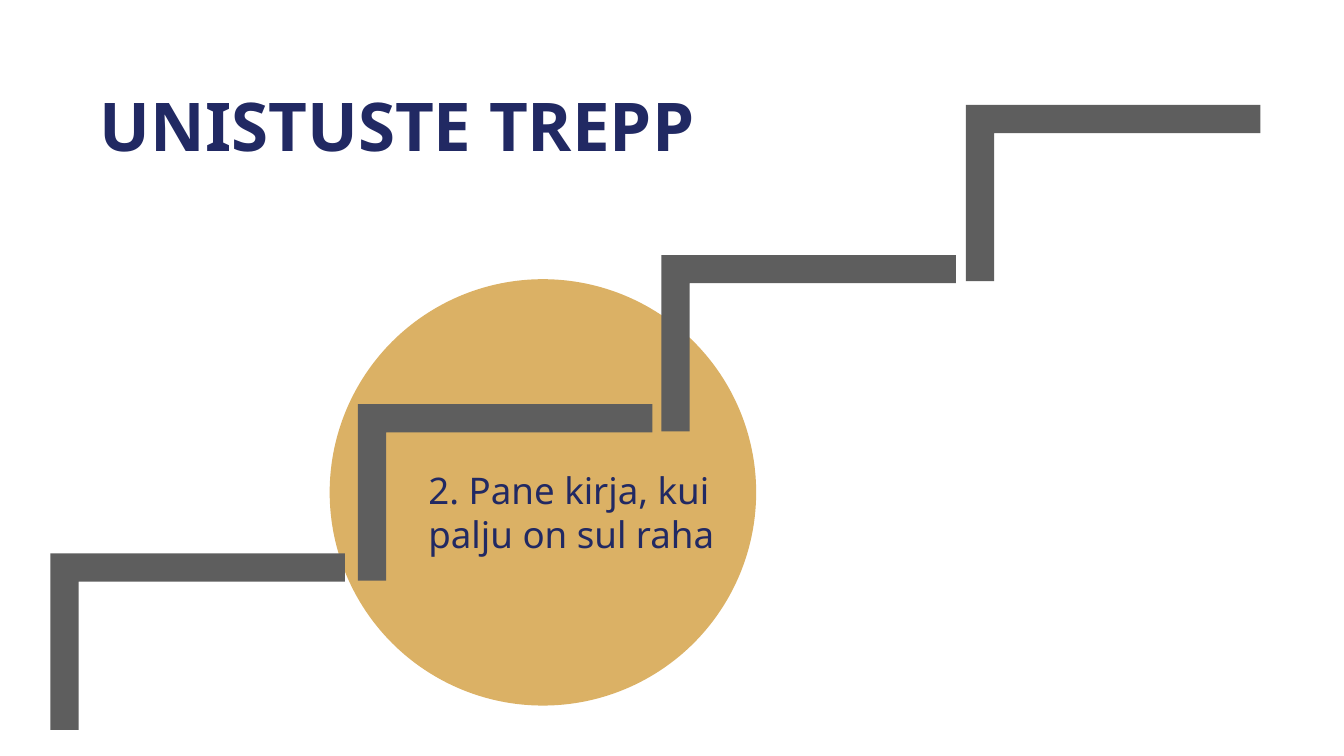
from dataclasses import dataclass

from pptx import Presentation
from pptx.dml.color import RGBColor
from pptx.enum.shapes import MSO_SHAPE
from pptx.enum.text import MSO_ANCHOR, PP_ALIGN
from pptx.util import Inches, Pt


@dataclass(frozen=True)
class Theme:
    font: str = "Noto Sans"
    navy: RGBColor = RGBColor(0x21, 0x29, 0x63)
    gold: RGBColor = RGBColor(0xDB, 0xB1, 0x65)
    grey: RGBColor = RGBColor(0x5E, 0x5E, 0x5E)
    title_size: float = 48
    step_size: float = 26.2


THEME = Theme()
STEP_WIDTH, STEP_HEIGHT, STEP_THICKNESS = 2.92, 1.75, 0.28
STEP_CORNERS = [(0.5, 5.49), (3.55, 4.01), (6.56, 2.53), (9.58, 1.04)]


def paint(shape, color):
    shape.shadow.inherit = False
    shape.fill.solid()
    shape.fill.fore_color.rgb = color
    shape.line.fill.background()


def add_text(slide, box, text, size, margins, bold=False,
             anchor=MSO_ANCHOR.TOP, line_spacing=1.0):
    """Place one navy paragraph in box; margins are horizontal, vertical."""
    text_frame = slide.shapes.add_textbox(*map(Inches, box)).text_frame
    text_frame.word_wrap = True
    text_frame.vertical_anchor = anchor
    text_frame.margin_left = text_frame.margin_right = Inches(margins[0])
    text_frame.margin_top = text_frame.margin_bottom = Inches(margins[1])
    text_frame.text = text
    paragraph = text_frame.paragraphs[0]
    paragraph.alignment = PP_ALIGN.LEFT
    paragraph.line_spacing = line_spacing
    font = paragraph.runs[0].font
    font.name = THEME.font
    font.size = Pt(size)
    font.bold = bold
    font.color.rgb = THEME.navy


def add_title(slide, box):
    add_text(slide, box, "UNISTUSTE TREPP", THEME.title_size, (0.1, 0.05),
             bold=True, line_spacing=0.9)


def add_highlight(slide, left, top, diameter):
    """Draw the gold circle with the text of the current step inside it."""
    circle = slide.shapes.add_shape(
        MSO_SHAPE.OVAL, *map(Inches, (left, top, diameter, diameter)))
    paint(circle, THEME.gold)
    add_text(slide, (left + 0.94, top + 1.75, 3.04, 1.11),
             "2. Pane kirja, kui palju on sul raha", THEME.step_size,
             (0.04, 0.04), anchor=MSO_ANCHOR.MIDDLE)


def add_step(slide, left, top, width, height):
    """Draw a stair step: a tread along the top and a riser on the left."""
    right, bottom = left + width, top + height
    inner_left, inner_top = left + STEP_THICKNESS, top + STEP_THICKNESS
    outline = [(right, inner_top), (inner_left, inner_top),
               (inner_left, bottom), (left, bottom), (left, top)]
    builder = slide.shapes.build_freeform(Inches(right), Inches(top))
    builder.add_line_segments([(Inches(x), Inches(y)) for x, y in outline])
    paint(builder.convert_to_shape(), THEME.grey)


def add_staircase(slide, corners):
    for left, top in corners:
        add_step(slide, left, top, STEP_WIDTH, STEP_HEIGHT)


def main():
    presentation = Presentation()
    presentation.slide_width = Inches(13.33)
    presentation.slide_height = Inches(7.5)
    slide = presentation.slides.add_slide(presentation.slide_layouts[6])
    add_highlight(slide, 3.27, 2.77, 4.23)
    add_title(slide, (0.89, 0.88, 8.98, 1.66))
    add_staircase(slide, STEP_CORNERS)
    presentation.save("out.pptx")


if __name__ == "__main__":
    main()
